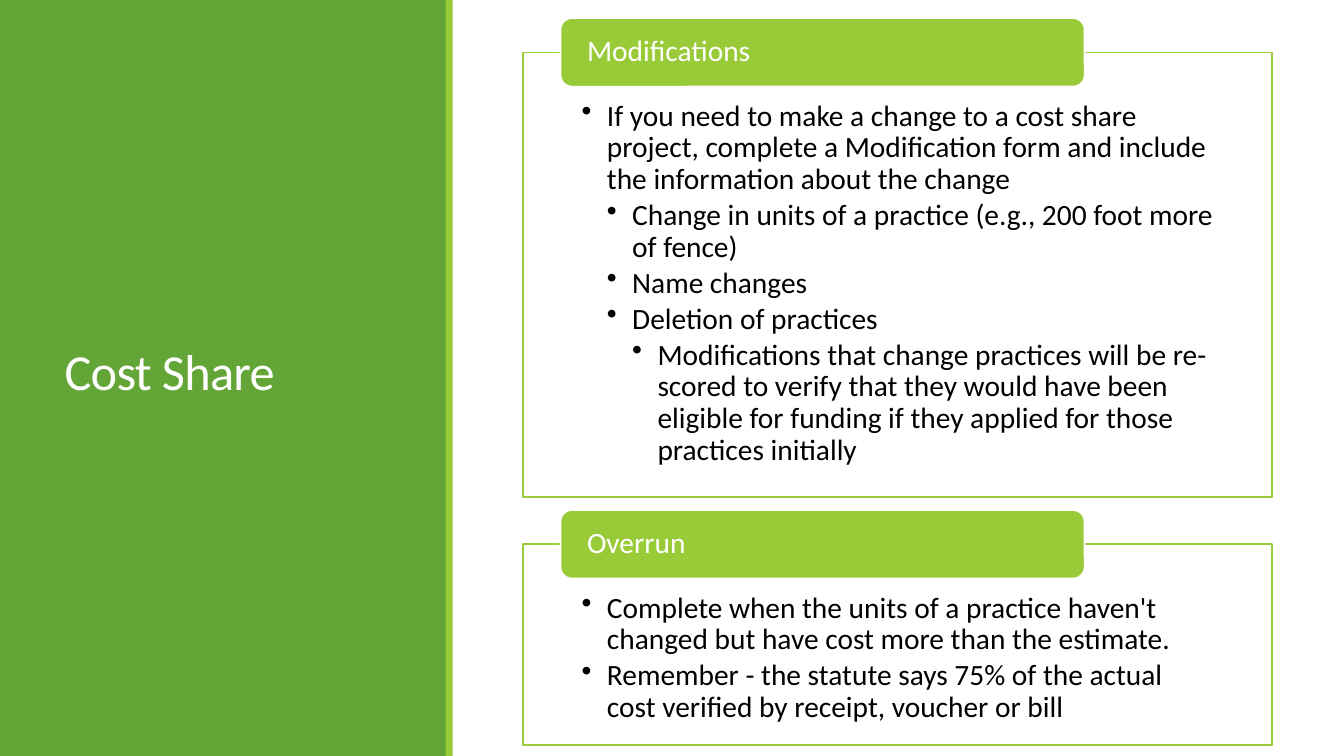
import dataclasses

import lxml.etree
import pptx
import pptx.dml.color
import pptx.enum.shapes
import pptx.enum.text
import pptx.oxml.ns
import pptx.util


@dataclasses.dataclass(frozen=True)
class Theme:
    green: str = "63A537"
    lime: str = "99CB38"
    white: str = "FFFFFF"
    black: str = "000000"
    font: str = "Calibri"
    title_size: float = 36
    body_size: float = 21
    line_width: float = 1.25
    bullet_gap: float = 3


@dataclasses.dataclass(frozen=True)
class Box:
    left: float
    top: float
    width: float
    height: float


@dataclasses.dataclass(frozen=True)
class Bullet:
    text: str
    level: int = 0


@dataclasses.dataclass(frozen=True)
class Section:
    heading: str
    top: float
    height: float
    bullets: tuple[Bullet, ...]


THEME = Theme()
SHAPE = pptx.enum.shapes.MSO_SHAPE
ANCHOR = pptx.enum.text.MSO_ANCHOR
ALIGN = pptx.enum.text.PP_ALIGN
WIDTH = pptx.util.Inches(13.33)
HEIGHT = pptx.util.Inches(7.5)

FRAME_LEFT, FRAME_WIDTH = 38.93, 55.73
LABEL_LEFT, LABEL_WIDTH, LABEL_HEIGHT = 41.7, 39, 9.07
INDENT = 1.88

SECTIONS = (
    Section("Modifications", 6.93, 58.8, (
        Bullet("If you need to make a change to a cost share project, complete a "
               "Modification form and include the information about the change"),
        Bullet("Change in units of a practice (e.g., 200 foot more of fence)", 1),
        Bullet("Name changes", 1),
        Bullet("Deletion of practices", 1),
        Bullet("Modifications that change practices will be re-scored to verify that "
               "they would have been eligible for funding if they applied for those "
               "practices initially", 2),
    )),
    Section("Overrun", 72, 26.53, (
        Bullet("Complete when the units of a practice haven't changed but have cost "
               "more than the estimate."),
        Bullet("Remember - the statute says 75% of the actual cost verified by "
               "receipt, voucher or bill"),
    )),
)


def cols(share: float) -> int:
    return round(WIDTH * share / 100)


def rows(share: float) -> int:
    return round(HEIGHT * share / 100)


def place(box: Box) -> tuple[int, int, int, int]:
    return cols(box.left), rows(box.top), cols(box.width), rows(box.height)


def rgb(color: str) -> pptx.dml.color.RGBColor:
    return pptx.dml.color.RGBColor.from_string(color)


def add_block(s, kind, box: Box, fill: str, line: str | None = None):
    sp = s.shapes.add_shape(kind, *place(box))
    sp.shadow.inherit = False
    sp.fill.solid()
    sp.fill.fore_color.rgb = rgb(fill)
    if line:
        sp.line.color.rgb = rgb(line)
        sp.line.width = pptx.util.Pt(THEME.line_width)
    else:
        sp.line.fill.background()
    return sp


def set_frame(tf, anchor, side: float, top: float = 0, bottom: float = 0) -> None:
    tf.word_wrap = True
    tf.vertical_anchor = anchor
    tf.margin_left = tf.margin_right = cols(side)
    tf.margin_top, tf.margin_bottom = rows(top), rows(bottom)


def write(p, text: str, size: float, color: str, spacing: float = 0.9):
    r = p.add_run()
    r.text = text
    p.alignment = ALIGN.LEFT
    p.line_spacing = spacing
    p.font.name = THEME.font
    p.font.size = pptx.util.Pt(size)
    p.font.color.rgb = rgb(color)
    return r


def add_bullet(p, bullet: Bullet) -> None:
    write(p, bullet.text, THEME.body_size, THEME.black)
    p.level = bullet.level
    p.space_before = pptx.util.Pt(0)
    p.space_after = pptx.util.Pt(THEME.bullet_gap)
    pPr = p._p.get_or_add_pPr()
    pPr.set("marL", str(cols(INDENT * (bullet.level + 1))))
    pPr.set("indent", str(-cols(INDENT)))
    mark = lxml.etree.Element(pptx.oxml.ns.qn("a:buChar"), char="•")
    pPr.insert_element_before(mark, "a:tabLst", "a:defRPr", "a:extLst")


def add_section(s, section: Section) -> None:
    frame = Box(FRAME_LEFT, section.top, FRAME_WIDTH, section.height)
    tf = add_block(s, SHAPE.RECTANGLE, frame, THEME.white, THEME.lime).text_frame
    set_frame(tf, ANCHOR.TOP, 4.35, 6.4, 2.13)
    for i, bullet in enumerate(section.bullets):
        add_bullet(tf.add_paragraph() if i else tf.paragraphs[0], bullet)

    label = Box(LABEL_LEFT, section.top - LABEL_HEIGHT / 2, LABEL_WIDTH, LABEL_HEIGHT)
    tf = add_block(s, SHAPE.ROUNDED_RECTANGLE, label, THEME.lime, THEME.white).text_frame
    set_frame(tf, ANCHOR.MIDDLE, 1.73)
    write(tf.paragraphs[0], section.heading, THEME.body_size, THEME.white)


def add_title(s, text: str) -> None:
    tf = s.shapes.add_textbox(*place(Box(4.05, 7.6, 25.28, 84.13))).text_frame
    set_frame(tf, ANCHOR.MIDDLE, 0.75)
    r = write(tf.paragraphs[0], text, THEME.title_size, THEME.white, 0.85)
    r._r.get_or_add_rPr().set("spc", "-50")


def main() -> None:
    prs = pptx.Presentation()
    prs.slide_width, prs.slide_height = WIDTH, HEIGHT
    s = prs.slides.add_slide(prs.slide_layouts[6])
    add_block(s, SHAPE.RECTANGLE, Box(0, 0, 33.23, 100), THEME.green)
    add_title(s, "Cost Share")
    add_block(s, SHAPE.RECTANGLE, Box(33.15, 0, 0.53, 100), THEME.lime)
    for section in SECTIONS:
        add_section(s, section)
    prs.save("out.pptx")


if __name__ == "__main__":
    main()
